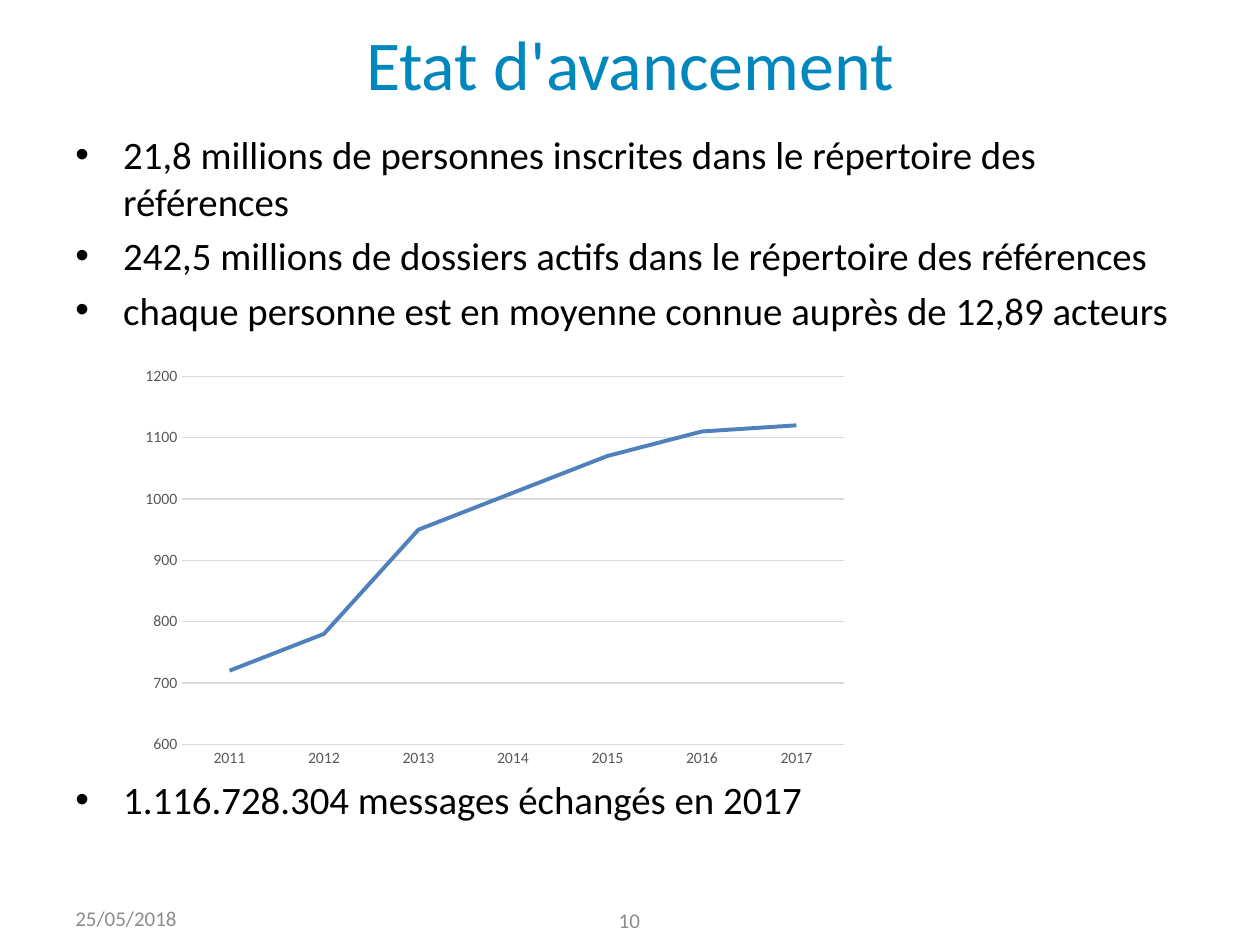
from dataclasses import dataclass

import pptx
import pptx.chart.data
import pptx.dml.color
import pptx.enum.chart
import pptx.enum.text
import pptx.oxml
import pptx.oxml.ns
import pptx.util
from pptx.util import Inches

FONT = "Calibri"
COLORS = {
    "title": "0087BE",
    "body": "000000",
    "footer": "8C8C8C",
    "axis": "595959",
    "grid": "D9D9D9",
    "line": "4F81BD",
}
ALIGN = pptx.enum.text.PP_ALIGN
ANCHOR = pptx.enum.text.MSO_ANCHOR


@dataclass
class Bullet:
    text: str
    space_before: float = 4.4


@dataclass
class Box:
    left: float
    top: float
    width: float
    height: float

    def lengths(self) -> tuple:
        return tuple(Inches(n) for n in (self.left, self.top, self.width, self.height))


CHART_GAP = 253  # points left free between the bullets for the chart
BULLETS = [
    Bullet("21,8 millions de personnes inscrites dans le répertoire des références", 0),
    Bullet("242,5 millions de dossiers actifs dans le répertoire des références"),
    Bullet("chaque personne est en moyenne connue auprès de 12,89 acteurs"),
    Bullet("1.116.728.304 messages échangés en 2017", CHART_GAP),
]
MESSAGES = {"2011": 720, "2012": 780, "2013": 950, "2014": 1010,
            "2015": 1070, "2016": 1110, "2017": 1120}
PLOT_AREA = {"x": 0.078, "y": 0.074, "w": 0.878, "h": 0.842}


def rgb(name: str) -> pptx.dml.color.RGBColor:
    return pptx.dml.color.RGBColor.from_string(COLORS[name])


def format_font(font, size: float, color: str) -> None:
    font.name = FONT
    font.size = pptx.util.Pt(size)
    font.color.rgb = rgb(color)


def format_line(line, color: str, width: float) -> None:
    line.color.rgb = rgb(color)
    line.width = pptx.util.Pt(width)


def write(paragraph, text: str, *, size: float, color: str, align=ALIGN.LEFT,
          space_before: float = 0) -> None:
    paragraph.alignment = align
    paragraph.space_before = pptx.util.Pt(space_before)
    run = paragraph.add_run()
    run.text = text
    format_font(run.font, size, color)


def add_text_box(slide, box: Box, anchor=ANCHOR.TOP):
    frame = slide.shapes.add_textbox(*box.lengths()).text_frame
    frame.word_wrap = True
    frame.vertical_anchor = anchor
    return frame


def set_bullet(paragraph, indent: float) -> None:
    properties = paragraph._p.get_or_add_pPr()
    properties.set("marL", str(Inches(indent)))
    properties.set("indent", str(-Inches(indent)))
    for tag, attribute, value in (("a:buFont", "typeface", "Arial"), ("a:buChar", "char", "•")):
        element = pptx.oxml.parse_xml(
            f'<{tag} {pptx.oxml.ns.nsdecls("a")} {attribute}="{value}"/>')
        properties.append(element)


def add_title(slide, text: str, box: Box) -> None:
    title = slide.shapes.title
    title.left, title.top, title.width, title.height = box.lengths()
    title.text_frame.vertical_anchor = ANCHOR.MIDDLE
    write(title.text_frame.paragraphs[0], text, size=40, color="title", align=ALIGN.CENTER)


def add_bullets(slide, bullets: list[Bullet], box: Box) -> None:
    frame = add_text_box(slide, box)
    for index, bullet in enumerate(bullets):
        paragraph = frame.add_paragraph() if index else frame.paragraphs[0]
        set_bullet(paragraph, 0.38)
        write(paragraph, bullet.text, size=22.2, color="body",
              space_before=bullet.space_before)


def set_plot_layout(chart) -> None:
    """Fix the inner plot area as fractions of the chart."""
    modes = "".join(f'<c:{side}Mode val="edge"/>' for side in "xy")
    sizes = "".join(f'<c:{key} val="{value}"/>' for key, value in PLOT_AREA.items())
    layout = pptx.oxml.parse_xml(
        f'<c:layout {pptx.oxml.ns.nsdecls("c")}><c:manualLayout>'
        f'<c:layoutTarget val="inner"/>{modes}{sizes}</c:manualLayout></c:layout>')
    plot_area = chart._chartSpace.chart.plotArea
    for old_layout in plot_area.findall(pptx.oxml.ns.qn("c:layout")):
        plot_area.remove(old_layout)
    plot_area.insert(0, layout)


def add_message_chart(slide, box: Box) -> None:
    data = pptx.chart.data.CategoryChartData()
    data.categories = list(MESSAGES)
    data.add_series("Series 1", list(MESSAGES.values()))
    chart = slide.shapes.add_chart(
        pptx.enum.chart.XL_CHART_TYPE.LINE, *box.lengths(), data).chart
    chart.has_title = False
    chart.has_legend = False
    format_font(chart.font, 10, "body")
    for axis in (chart.category_axis, chart.value_axis):
        axis.major_tick_mark = pptx.enum.chart.XL_TICK_MARK.NONE
        axis.minor_tick_mark = pptx.enum.chart.XL_TICK_MARK.NONE
        format_font(axis.tick_labels.font, 9, "axis")
    format_line(chart.category_axis.format.line, "grid", 0.75)
    values = chart.value_axis
    values.minimum_scale, values.maximum_scale, values.major_unit = 600, 1200, 100
    values.format.line.fill.background()
    format_line(values.major_gridlines.format.line, "grid", 0.75)
    chart.plots[0].vary_by_categories = False
    series = chart.plots[0].series[0]
    series.smooth = False
    series.marker.style = pptx.enum.chart.XL_MARKER_STYLE.NONE
    format_line(series.format.line, "line", 2.25)
    set_plot_layout(chart)


def add_footer(slide, text: str, box: Box, align) -> None:
    frame = add_text_box(slide, box, ANCHOR.MIDDLE)
    write(frame.paragraphs[0], text, size=12, color="footer", align=align)


def main() -> None:
    presentation = pptx.Presentation()
    presentation.slide_width = Inches(10)
    presentation.slide_height = Inches(7.5)
    slide = presentation.slides.add_slide(
        presentation.slide_layouts.get_by_name("Title Only"))
    add_title(slide, "Etat d'avancement", Box(0.5, 0.15, 9, 0.69))
    add_bullets(slide, BULLETS, Box(0.5, 0.99, 9, 5.98))
    add_message_chart(slide, Box(0.98, 2.73, 5.98, 3.47))
    add_footer(slide, "25/05/2018", Box(0.5, 7.07, 2.33, 0.43), ALIGN.LEFT)
    add_footer(slide, "10", Box(3.83, 7.1, 2.33, 0.4), ALIGN.CENTER)
    presentation.save("out.pptx")


if __name__ == "__main__":
    main()
